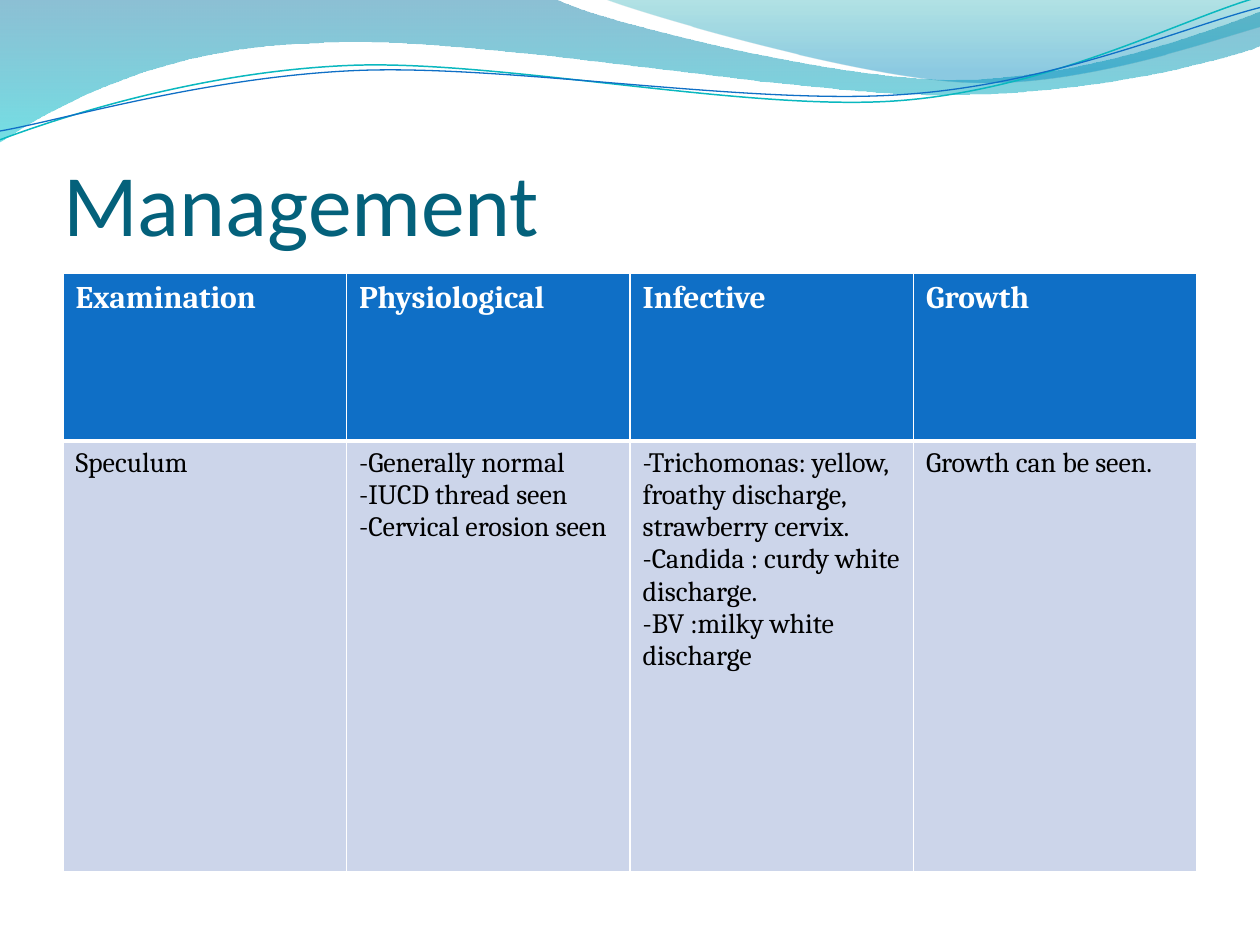
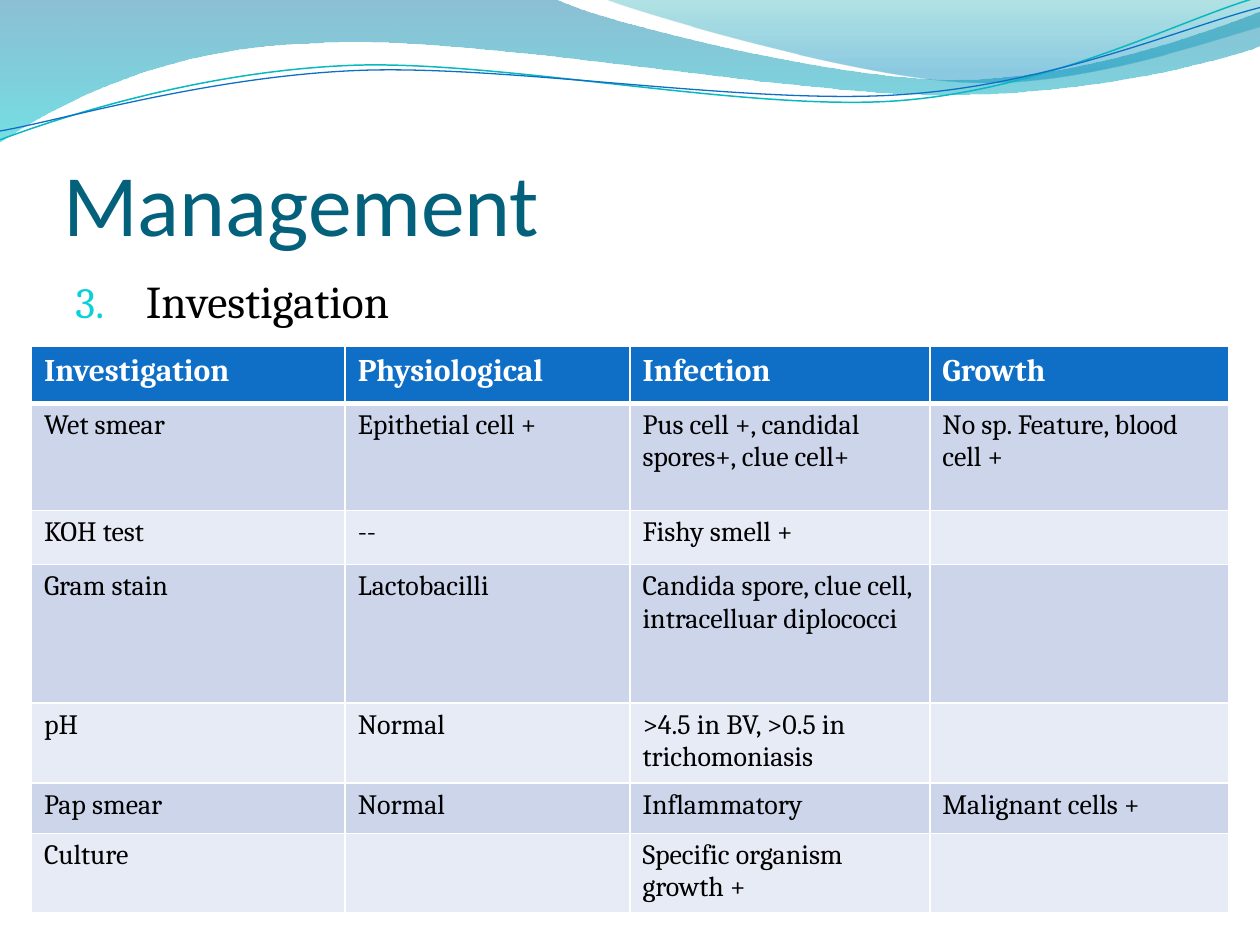
from lxml import etree
from pptx import Presentation
from pptx.dml.color import RGBColor
from pptx.enum.text import MSO_ANCHOR, MSO_AUTO_SIZE, PP_ALIGN
from pptx.oxml.ns import qn
from pptx.util import Emu, Pt

LEFT, BOTTOM, NO_FIT = PP_ALIGN.LEFT, MSO_ANCHOR.BOTTOM, MSO_AUTO_SIZE.NONE
TITLE_ONLY = 5
PX = 9144  # 100 px to the inch

# Each wave: start point, then points (x, y) or cubic curves (x1, y1, x2, y2, x, y)
WIDE_WAVE = [(0, 0), (440, -1), (476, 17, 664, 63, 758, 63), (853, 63, 958, 26, 1000, 9),
             (1001, 36), (983, 44, 870, 76, 746, 75), (622, 75, 382, 28, 257, 34),
             (129, 36, 46, 83, -1, 113), (0, 0)]
RIGHT_WAVE = [(479, -1), (509, 11, 682, 62, 769, 65), (856, 69, 961, 32, 1000, 21),
              (1000, 0), (479, -1)]
TEAL_LINE = [(0, 111), (48, 93, 158, 57, 277, 52), (395, 47, 593, 89, 713, 80),
             (833, 71, 938, 15, 998, -2)]
BLUE_LINE = [(0, 104), (47, 96, 164, 61, 283, 56), (403, 51, 597, 84, 717, 75),
             (836, 67, 941, 21, 1000, 6)]

EXAMINATION = [
    ["Examination", "Physiological", "Infective", "Growth"],
    ["Speculum",
     "-Generally normal\n-IUCD thread seen\n-Cervical erosion seen",
     "-Trichomonas: yellow, froathy discharge, strawberry cervix.\n"
     "-Candida : curdy white discharge.\n-BV :milky white discharge",
     "Growth can be seen."],
]
INVESTIGATION = [
    ["Investigation", "Physiological", "Infection", "Growth"],
    ["Wet smear", "Epithetial cell +", "Pus cell +, candidal spores+, clue cell+",
     "No sp. Feature, blood cell +"],
    ["KOH test", "--", "Fishy smell +", ""],
    ["Gram stain", "Lactobacilli", "Candida spore, clue cell, intracelluar diplococci", ""],
    ["pH", "Normal", ">4.5 in BV, >0.5 in trichomoniasis", ""],
    ["Pap smear", "Normal", "Inflammatory", "Malignant cells +"],
    ["Culture", "", "Specific organism growth +", ""],
]


def px(*lengths):
    return [Emu(round(n * PX)) for n in lengths]


def rgb(color):
    return RGBColor.from_string(color)


def sub(parent, tag, **attrs):
    return etree.SubElement(parent, qn(tag), {k: str(v) for k, v in attrs.items()})


class Deck:
    heading_font, body_font = "Calibri", "Cambria"
    title_color, accent, bullet_color = "04617B", "0F6FC6", "0BD0D9"
    white, black = "FFFFFF", "000000"
    bands = ("CCD5EA", "E7EBF5")

    def __init__(self):
        self.prs = Presentation()
        self.prs.slide_width, self.prs.slide_height = px(1000, 750)

    def slide(self, title):
        self.s = self.prs.slides.add_slide(self.prs.slide_layouts[TITLE_ONLY])
        self.wave(WIDE_WAVE, [(0, "0074A1", 45), (1, "00C6CF", 55)])
        self.wave(RIGHT_WAVE, [(0, "00A1A9", 30), (0.8, "008BBF", 45)])
        self.curve(TEAL_LINE, "0AB8BF", 0.85)
        self.curve(BLUE_LINE, self.accent, 0.75)
        self.title(title)

    def outline(self, segments, close):
        """Freeform whose six-number segments become cubic curves."""
        numbers = px(*(n for segment in segments for n in segment))
        start, *points = zip(numbers[::2], numbers[1::2])
        builder = self.s.shapes.build_freeform(*start, scale=1.0)
        builder.add_line_segments(points, close=close)
        sp = builder.convert_to_shape()
        sp.shadow.inherit = False
        steps = iter(list(sp.element.iter(qn("a:lnTo"))))
        for segment in segments[1:]:
            step = next(steps)
            if len(segment) == 6:
                step.tag = qn("a:cubicBezTo")
                for _ in range(2):
                    control = next(steps)
                    step.append(control[0])
                    control.getparent().remove(control)
        return sp

    def wave(self, segments, stops):
        """Closed area with a downward gradient of (position, colour, opacity %) stops."""
        sp = self.outline(segments, True)
        sp.line.fill.background()
        sp.fill.gradient()
        sp.fill.gradient_angle = 270
        for stop, (position, color, opacity) in zip(sp.fill.gradient_stops, stops):
            stop.position = position
            stop.color.rgb = rgb(color)
        colors = sp.element.spPr.find(qn("a:gradFill")).iter(qn("a:srgbClr"))
        for clr, (position, color, opacity) in zip(colors, stops):
            sub(clr, "a:alpha", val=opacity * 1000)

    def curve(self, segments, color, width):
        sp = self.outline(segments, False)
        sp.fill.background()
        sp.line.color.rgb = rgb(color)
        sp.line.width = Pt(width)

    def run(self, p, text, size, color, font=None, bold=False):
        r = p.add_run()
        r.text = text
        r.font.name = font or self.body_font
        r.font.size, r.font.bold = Pt(size), bold
        r.font.color.rgb = rgb(color)

    def title(self, text):
        sp = self.s.shapes.title
        sp.left, sp.top, sp.width, sp.height = px(50, 77, 900, 125)
        tf = sp.text_frame
        tf.auto_size, tf.vertical_anchor, tf.word_wrap = NO_FIT, BOTTOM, True
        tf.margin_left, tf.margin_top, tf.margin_right, tf.margin_bottom = px(0, 5, 0, 0)
        p = tf.paragraphs[0]
        p.alignment = LEFT
        self.run(p, text, 50, self.title_color, self.heading_font)

    def numbered(self, number, text, box):
        tf = self.s.shapes.add_textbox(*px(*box)).text_frame
        tf.word_wrap = True
        p = tf.paragraphs[0]
        p.space_before = Pt(5)
        pPr = p._p.get_or_add_pPr()
        indent, = px(56)
        pPr.set("marL", str(indent))
        pPr.set("indent", str(-indent))
        sub(sub(pPr, "a:buClr"), "a:srgbClr", val=self.bullet_color)
        sub(pPr, "a:buSzPct", val=95000)
        sub(pPr, "a:buFont", typeface=self.body_font)
        sub(pPr, "a:buAutoNum", type="arabicPeriod", startAt=number)
        self.run(p, text, 26, self.black)

    def borders(self, cell, top, bottom):
        tcPr = cell._tc.get_or_add_tcPr()
        for side, width in (("L", 1), ("R", 1), ("T", top), ("B", bottom)):
            ln = sub(tcPr, "a:ln" + side, w=Pt(width))
            sub(sub(ln, "a:solidFill"), "a:srgbClr", val=self.white)

    def table(self, left, top, rows, widths, heights):
        box = px(left, top, sum(widths), sum(heights))
        table = self.s.shapes.add_table(len(rows), len(widths), *box).table
        for col, width in zip(table.columns, px(*widths)):
            col.width = width
        for row, height in zip(table.rows, px(*heights)):
            row.height = height
        for i, texts in enumerate(rows):
            header = i == 0
            size, color = (18, self.white) if header else (16, self.black)
            for j, text in enumerate(texts):
                cell = table.cell(i, j)
                self.borders(cell, 3 if i == 1 else 1, 3 if header else 1)
                cell.fill.solid()
                cell.fill.fore_color.rgb = rgb(self.accent if header else self.bands[(i - 1) % 2])
                tf = cell.text_frame
                for k, line in enumerate(text.split("\n") if text else []):
                    p = tf.add_paragraph() if k else tf.paragraphs[0]
                    self.run(p, line, size, color, bold=header)


def main():
    deck = Deck()
    deck.slide("Management")
    deck.table(50, 217, EXAMINATION, [225] * 4, [133, 342])

    deck.slide("Management")
    deck.numbered(3, "Investigation", (50, 212, 900, 480))
    deck.table(25, 275, INVESTIGATION, [249, 226, 238, 237], [45, 85, 43, 110, 59, 40, 59])
    deck.prs.save("out.pptx")


if __name__ == "__main__":
    main()
